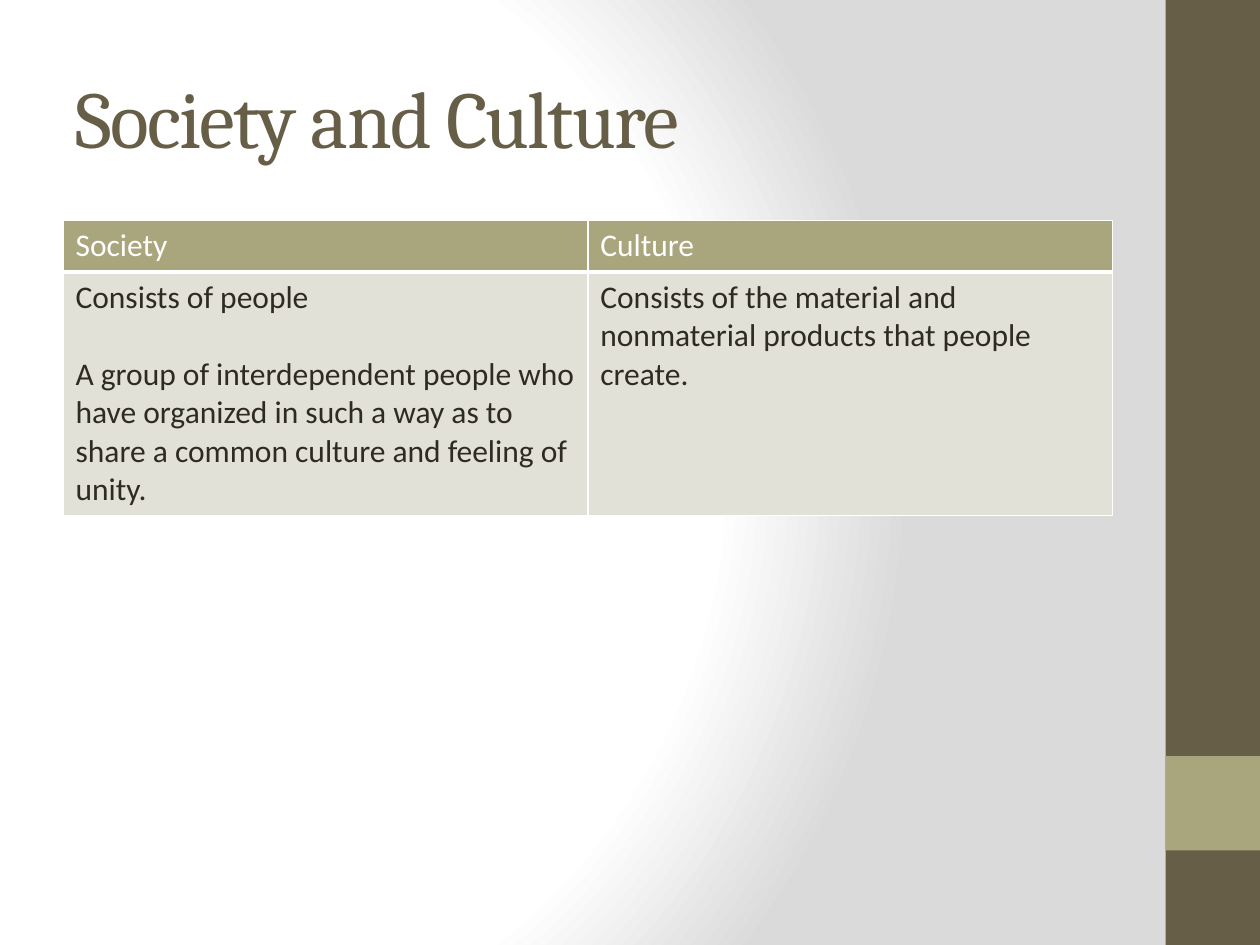
"""Build the Society and Culture comparison slide."""
from dataclasses import dataclass

from lxml.etree import SubElement
from pptx import Presentation
from pptx.dml.color import RGBColor
from pptx.enum.shapes import MSO_SHAPE
from pptx.enum.text import MSO_ANCHOR, MSO_AUTO_SIZE, PP_ALIGN
from pptx.oxml import parse_xml
from pptx.oxml.ns import nsdecls, qn
from pptx.util import Inches, Pt


@dataclass(frozen=True)
class Theme:
    brown: str = "675E47"
    olive: str = "A9A57C"
    pale: str = "E2E1D7"
    ink: str = "2F2B20"
    white: str = "FFFFFF"
    grey: str = "DADADA"
    heading_font: str = "Cambria"
    body_font: str = "Calibri"
    title_size: int = 46
    body_size: int = 18
    paragraph_gap: int = 22


def set_border(cell, side, width):
    tcPr = cell._tc.get_or_add_tcPr()
    ln = SubElement(tcPr, qn(f"a:ln{side}"), w=str(Pt(width)))
    fill = SubElement(ln, qn("a:solidFill"))
    SubElement(fill, qn("a:srgbClr"), val=theme.white)


def set_font(p, name, size, color):
    p.font.name = name
    p.font.size = Pt(size)
    p.font.bold = False
    p.font.color.rgb = RGBColor.from_string(color)


theme = Theme()
prs = Presentation()
prs.slide_width, prs.slide_height = Inches(10), Inches(7.5)
s = prs.slides.add_slide(prs.slide_layouts[5])

stops = "".join(
    f'<a:gs pos="{pos * 1000}"><a:srgbClr val="{color}"/></a:gs>'
    for pos, color in [(0, theme.white), (75, theme.white), (100, theme.grey)]
)
s.element.cSld.insert(0, parse_xml(
    f'<p:bg {nsdecls("p", "a")}><p:bgPr><a:gradFill rotWithShape="1">'
    f'<a:gsLst>{stops}</a:gsLst><a:path path="circle">'
    '<a:fillToRect l="20000" t="50000" r="100000" b="50000"/></a:path>'
    '</a:gradFill><a:effectLst/></p:bgPr></p:bg>'
))

for top, height, color in [(0, 7.5, theme.brown), (6, 0.75, theme.olive)]:
    sp = s.shapes.add_shape(MSO_SHAPE.RECTANGLE, Inches(9.25), Inches(top), Inches(0.75), Inches(height))
    sp.shadow.inherit = False
    sp.fill.solid()
    sp.fill.fore_color.rgb = RGBColor.from_string(color)
    sp.line.fill.background()

title = s.shapes.title
title.left, title.top = Inches(0.5), Inches(0.3)
title.width, title.height = Inches(8.33), Inches(1.25)
tf = title.text_frame
tf.text = "Society and Culture"
tf.auto_size = MSO_AUTO_SIZE.NONE
tf.vertical_anchor = MSO_ANCHOR.MIDDLE
p = tf.paragraphs[0]
p.alignment = PP_ALIGN.LEFT
set_font(p, theme.heading_font, theme.title_size, theme.brown)
p.runs[0].font._element.set("spc", "-100")

rows = [
    ["Society", "Culture"],
    [
        "Consists of people\nA group of interdependent people who have organized in such a way "
        "as to share a common culture and feeling of unity.",
        "Consists of the material and nonmaterial products that people create.",
    ],
]
styles = [
    (0.41, theme.olive, theme.white, {"L": 1, "R": 1, "T": 1, "B": 3}),
    (1.93, theme.pale, theme.ink, {"L": 1, "R": 1, "T": 3, "B": 1}),
]
table = s.shapes.add_table(2, 2, Inches(0.5), Inches(1.75), Inches(8.33), Inches(2.34)).table
for i, (texts, (height, fill, color, borders)) in enumerate(zip(rows, styles)):
    table.rows[i].height = Inches(height)
    for j, text in enumerate(texts):
        cell = table.cell(i, j)
        cell.text = text
        for side, width in borders.items():
            set_border(cell, side, width)
        cell.fill.solid()
        cell.fill.fore_color.rgb = RGBColor.from_string(fill)
        for k, p in enumerate(cell.text_frame.paragraphs):
            set_font(p, theme.body_font, theme.body_size, color)
            p.space_before = Pt(theme.paragraph_gap * k)

prs.save("out.pptx")
